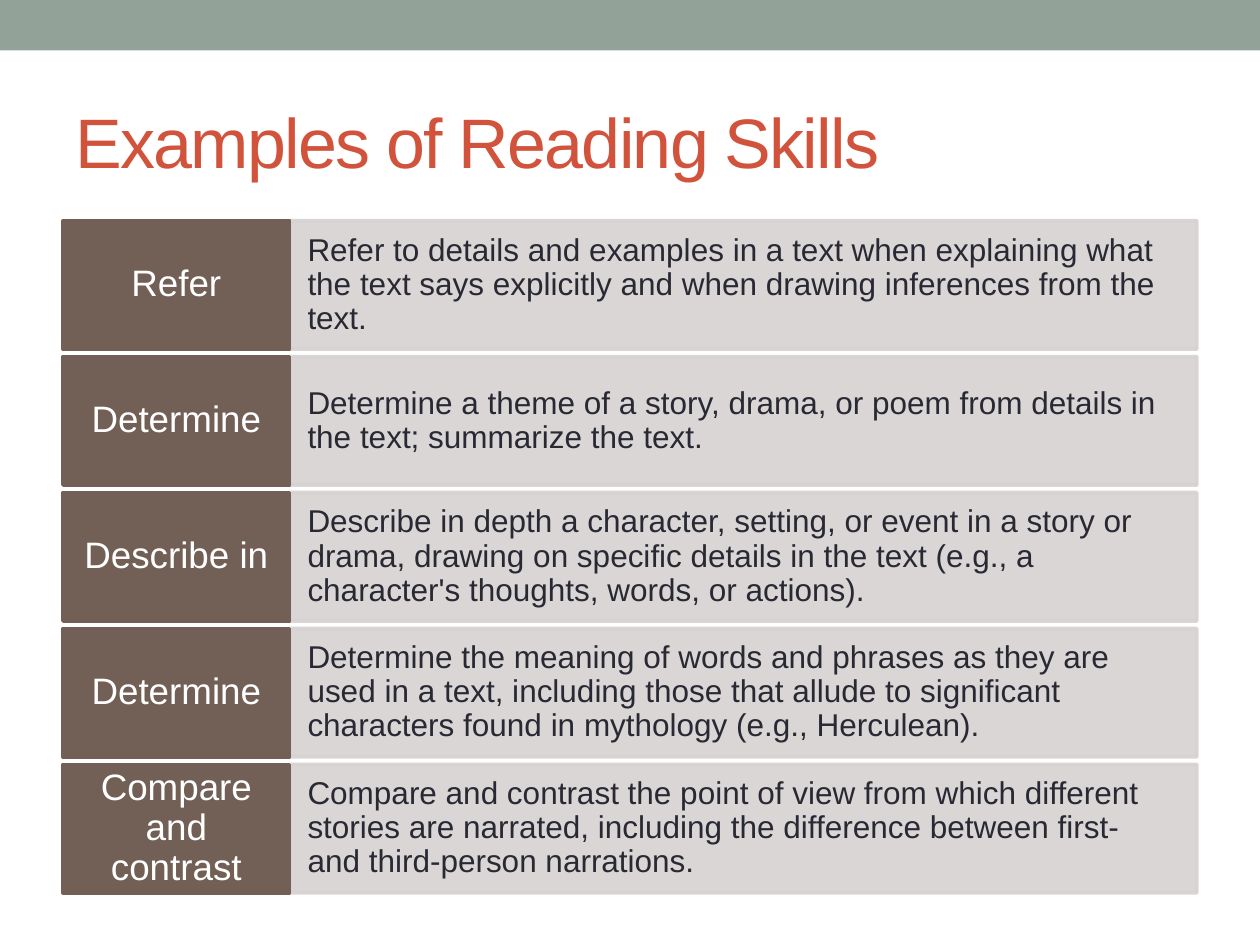
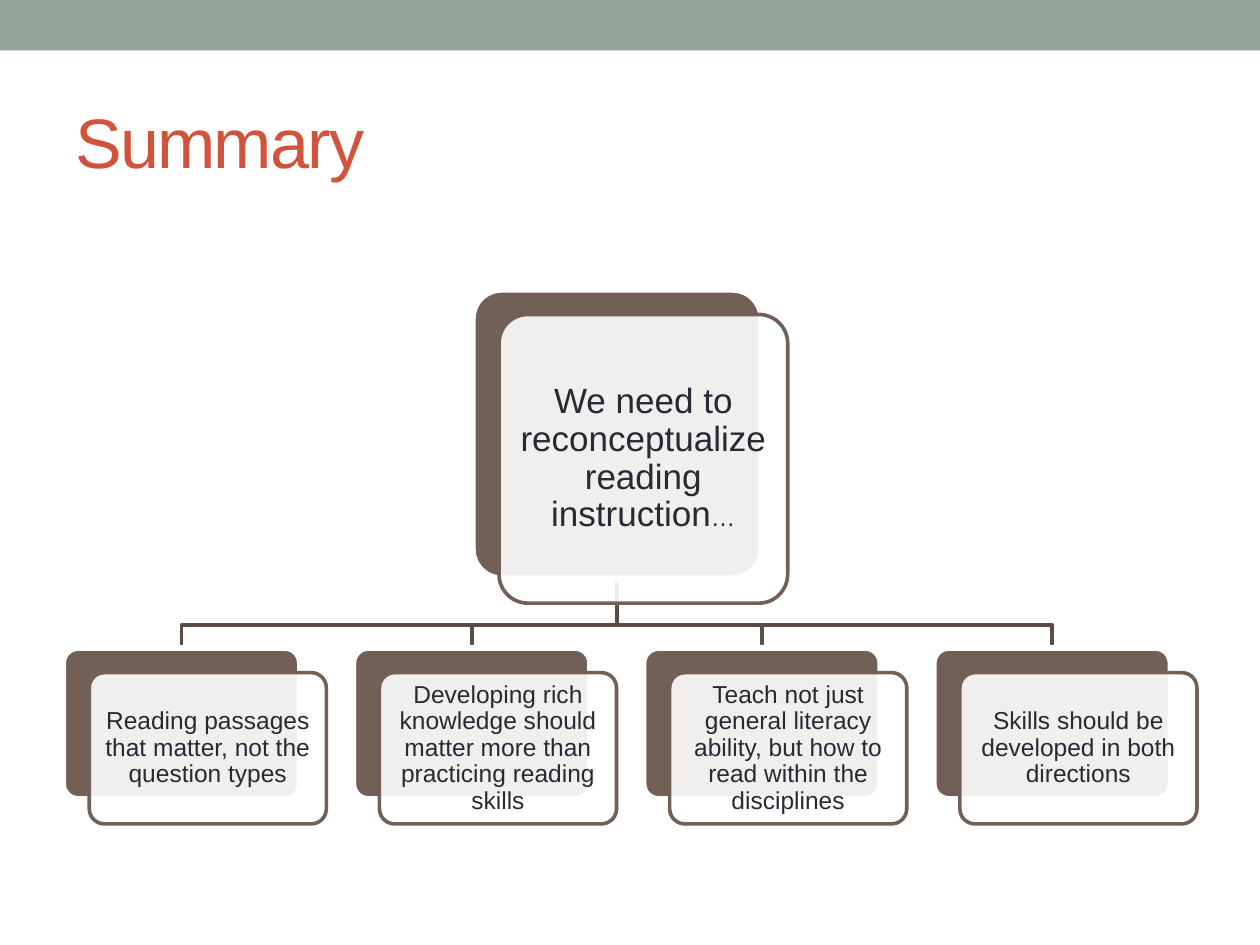
import pptx
import pptx.util
import pptx.dml.color
import pptx.enum.shapes
import pptx.enum.text
import pptx.oxml
import pptx.oxml.ns

Cm, Pt = pptx.util.Cm, pptx.util.Pt
SHAPE = pptx.enum.shapes.MSO_SHAPE
ALIGN = pptx.enum.text.PP_ALIGN

FONT = "Arial"
BAND, TITLE, INK, WHITE = "93A299", "D2533C", "292934", "FFFFFF"
BROWN, PALE, WIRE = "726056", "D5D2D1", "5B4D45"
LINE = 2.08


def paint(color_holder, color, alpha=None):
    """Give a fill a solid colour, with an opacity in percent if wanted."""
    color_holder.solid()
    color_holder.fore_color.rgb = pptx.dml.color.RGBColor.from_string(color)
    if alpha is not None:
        clr = color_holder._xPr.find(".//" + pptx.oxml.ns.qn("a:srgbClr"))
        node = pptx.oxml.parse_xml(
            f'<a:alpha {pptx.oxml.ns.nsdecls("a")} val="{alpha * 1000}"/>')
        clr.append(node)


def add_run(p, text, size=18, color=INK, spacing=None):
    r = p.add_run()
    r.text = text
    r.font.name, r.font.size = FONT, Pt(size)
    paint(r.font.fill, color)
    if spacing is not None:
        r._r.get_or_add_rPr().set("spc", str(spacing * 100))
    return r


def write(tf, text, align=ALIGN.CENTER, inset=(0.25, 0.13), leading=0.9, **fmt):
    """Fill a text frame with one paragraph and return that paragraph."""
    tf.word_wrap = True
    tf.auto_size = pptx.enum.text.MSO_AUTO_SIZE.NONE
    tf.vertical_anchor = pptx.enum.text.MSO_ANCHOR.MIDDLE
    tf.margin_left = tf.margin_right = Cm(inset[0])
    tf.margin_top = tf.margin_bottom = Cm(inset[1])
    p = tf.paragraphs[0]
    p.alignment, p.line_spacing = align, leading
    add_run(p, text, **fmt)
    return p


class Deck:
    def __init__(self):
        self.prs = pptx.Presentation()
        self.prs.slide_width, self.prs.slide_height = Cm(25.4), Cm(19.05)
        self.s = None

    def slide(self, title):
        """Start a slide with the top band and its title."""
        self.s = self.prs.slides.add_slide(self.prs.slide_layouts[5])
        self.box(0, 0, 25.4, 1.02, BAND)
        sp = self.s.shapes.title
        sp.left, sp.top, sp.width, sp.height = Cm(1.27), Cm(1.47), Cm(22.86), Cm(2.74)
        write(sp.text_frame, title, align=ALIGN.LEFT, leading=1.0,
              size=40, color=TITLE, spacing=-1)

    def box(self, x, y, w, h, fill, line=None, width=LINE, alpha=None,
            line_alpha=None, rounded=False):
        kind = SHAPE.ROUNDED_RECTANGLE if rounded else SHAPE.RECTANGLE
        sp = self.s.shapes.add_shape(kind, Cm(x), Cm(y), Cm(w), Cm(h))
        sp.shadow.inherit = False
        if rounded:
            sp.adjustments[0] = 0.1
        paint(sp.fill, fill, alpha)
        if line:
            paint(sp.line.fill, line, line_alpha)
            sp.line.width = Pt(width)
        else:
            sp.line.fill.background()
        return sp

    def card(self, x, y, w, h, text, size, inset):
        """A brown rounded plate with a translucent text plate set over it."""
        self.box(x, y, w, h, BROWN, WHITE, width=3.5, rounded=True)
        front = self.box(x + 0.53, y + 0.5, w, h, WHITE, BROWN, alpha=90, rounded=True)
        return write(front.text_frame, text, size=size, inset=(inset, inset))

    def wire(self, *points):
        """An open line through the points."""
        pts = [(Cm(x), Cm(y)) for x, y in points]
        builder = self.s.shapes.build_freeform(*pts[0])
        builder.add_line_segments(pts[1:], close=False)
        sp = builder.convert_to_shape()
        sp.shadow.inherit = False
        sp.fill.background()
        paint(sp.line.fill, WIRE)
        sp.line.width = Pt(LINE)


SKILLS = [
    ("Refer", "Refer to details and examples in a text when explaining what the text "
     "says explicitly and when drawing inferences from the text."),
    ("Determine", "Determine a theme of a story, drama, or poem from details in the "
     "text; summarize the text."),
    ("Describe in", "Describe in depth a character, setting, or event in a story or "
     "drama, drawing on specific details in the text (e.g., a character's thoughts, "
     "words, or actions)."),
    ("Determine", "Determine the meaning of words and phrases as they are used in a "
     "text, including those that allude to significant characters found in mythology "
     "(e.g., Herculean)."),
    ("Compare and contrast", "Compare and contrast the point of view from which "
     "different stories are narrated, including the difference between first- and "
     "third-person narrations."),
]
POINTS = [
    "Reading passages that matter, not the question types",
    "Developing rich knowledge should matter more than practicing reading skills",
    "Teach not just general literacy ability, but how to read within the disciplines",
    "Skills should be developed in both directions",
]


def skills_slide(deck):
    deck.slide("Examples of Reading Skills")
    left, top, pitch, height, label_w = 1.27, 4.45, 2.74, 2.59, 4.57
    for i, (label, detail) in enumerate(SKILLS):
        y = top + i * pitch
        body = deck.box(left + label_w, y, 18.29, height, PALE, PALE,
                        alpha=90, line_alpha=90)
        write(body.text_frame, detail, align=ALIGN.LEFT, inset=(0.36, 0))
        tag = deck.box(left, y, label_w, height, BROWN, BROWN)
        write(tag.text_frame, label, size=21, color=WHITE, inset=(0.25, 0.25))


def summary_slide(deck):
    deck.slide("Summary")
    root_x, root_y, root_size = 9.53, 5.84, 5.82
    left, top, pitch, w, h = 1.27, 13.06, 5.85, 4.78, 3.05
    xs = [left + i * pitch for i in range(len(POINTS))]

    # Branches, behind the cards
    stem, bus = root_x + root_size / 2, 12.6
    for x in xs:
        mid = x + w / 2
        deck.wire((stem, root_y + root_size), (stem, bus), (mid, bus), (mid, top))

    # Main idea and its points
    p = deck.card(root_x, root_y, root_size, root_size,
                  "We need to reconceptualize reading instruction", 20, 0.2)
    add_run(p, "…", size=14)
    for x, text in zip(xs, POINTS):
        deck.card(x, top, w, h, text, 14, 0.15)


def main():
    deck = Deck()
    skills_slide(deck)
    summary_slide(deck)
    deck.prs.save("out.pptx")


if __name__ == "__main__":
    main()
